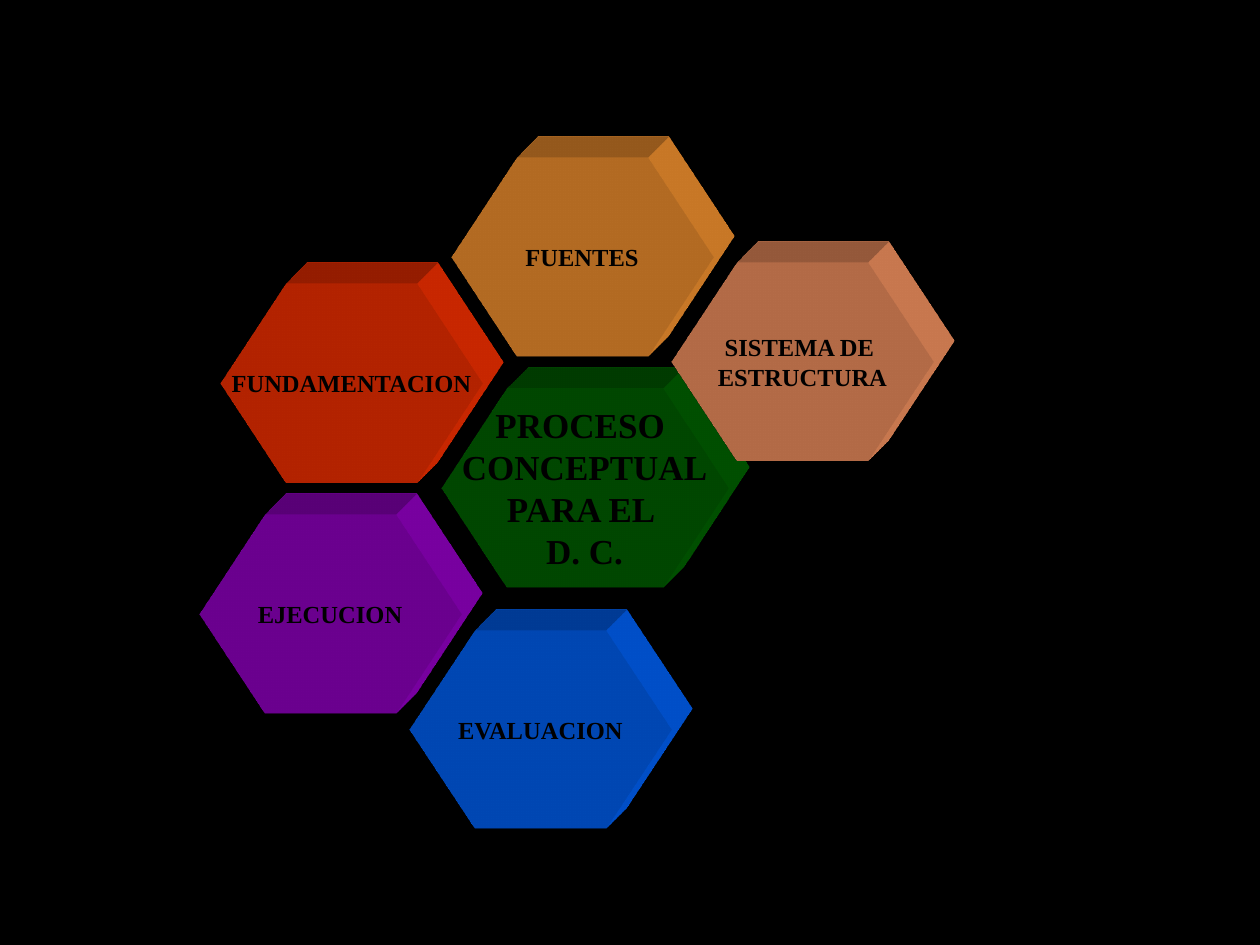
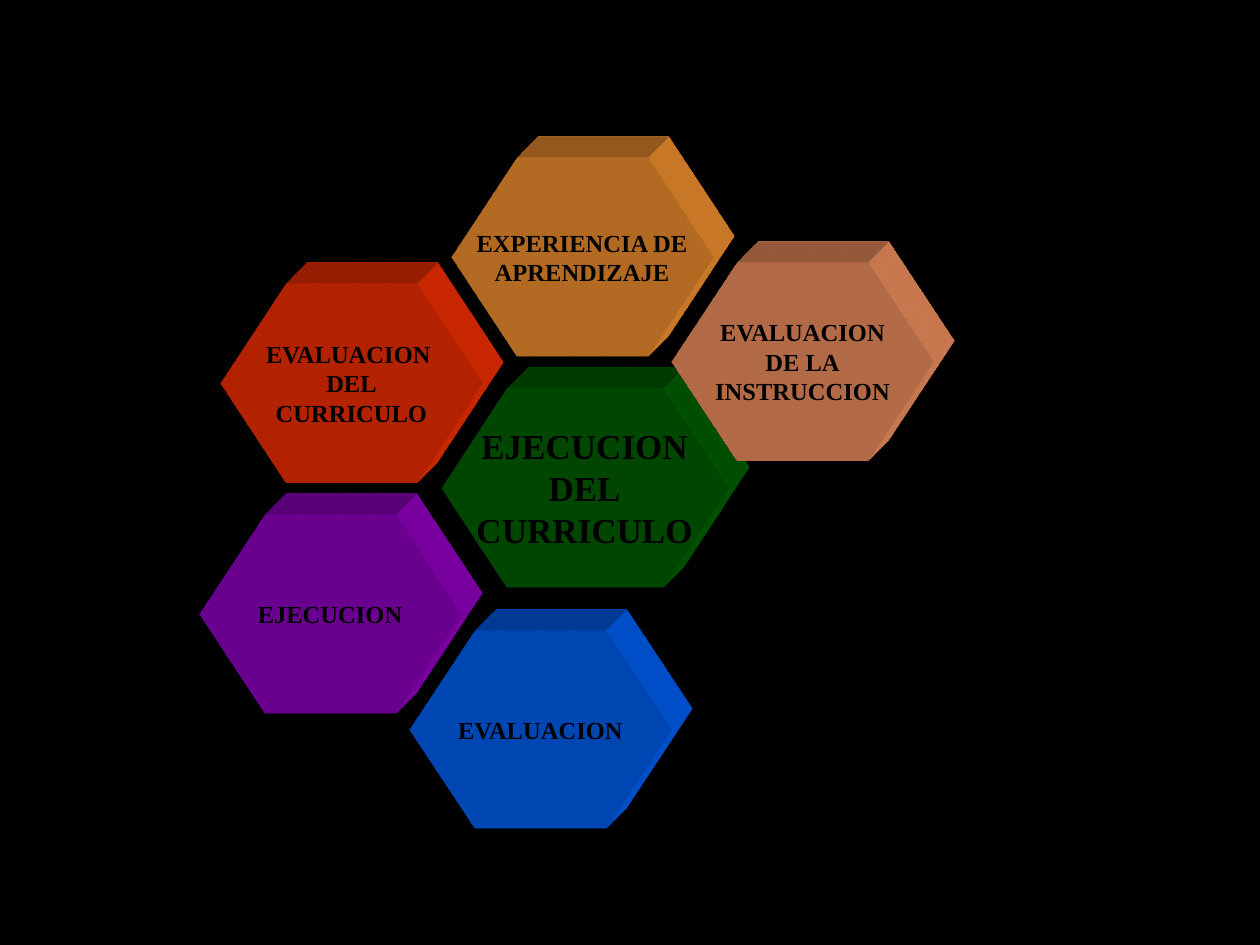
from lxml import etree
from pptx import Presentation
from pptx.dml.color import RGBColor
from pptx.enum.shapes import MSO_SHAPE
from pptx.enum.text import MSO_ANCHOR, PP_ALIGN
from pptx.oxml import parse_xml
from pptx.util import Inches, Pt

HEXAGON = MSO_SHAPE.HEXAGON
MIDDLE = MSO_ANCHOR.MIDDLE
CENTER = PP_ALIGN.CENTER

BLACK = RGBColor(0x00, 0x00, 0x00)
GREEN = RGBColor(0x00, 0x66, 0x00)
BLUE = RGBColor(0x00, 0x66, 0xFF)
PURPLE = RGBColor(0x99, 0x00, 0xCC)
RED = RGBColor(0xFF, 0x33, 0x00)
ORANGE = RGBColor(0xFF, 0x99, 0x33)
SALMON = RGBColor(0xFF, 0x99, 0x66)
FONT = "Times New Roman"

# Labels of each honeycomb, one list of lines per cell, in the order of CELLS
HONEYCOMBS = [
    [
        ["PROCESO ", "CONCEPTUAL", "PARA EL ", "D. C."],
        ["EVALUACION"],
        ["EJECUCION"],
        ["FUNDAMENTACION"],
        ["FUENTES"],
        ["SISTEMA DE ", "ESTRUCTURA"],
    ],
    [
        ["EJECUCION", "DEL", "CURRICULO"],
        ["EVALUACION"],
        ["EJECUCION"],
        ["EVALUACION ", "DEL", "CURRICULO"],
        ["EXPERIENCIA DE", "APRENDIZAJE"],
        ["EVALUACION", "DE LA", "INSTRUCCION"],
    ],
]

# Cells: left, top, width, text size, colour; the central topic comes first
CELL_HEIGHT = 1.58
CELLS = [
    (3.5, 3.08, 2.28, 20, GREEN),
    (3.25, 5, 2.08, 14, BLUE),
    (1.58, 4.08, 2.08, 14, PURPLE),
    (1.75, 2.25, 2.08, 14, RED),
    (3.58, 1.25, 2.08, 14, ORANGE),
    (5.33, 2.08, 2.08, 14, SALMON),
]

# Depth towards the top right, in the cell's own colour
A_NS = "http://schemas.openxmlformats.org/drawingml/2006/main"
SCENE = (f'<a:scene3d xmlns:a="{A_NS}"><a:camera prst="legacyObliqueTopRight"/>'
         '<a:lightRig rig="legacyFlat3" dir="b"/></a:scene3d>')
DEPTH = (f'<a:sp3d xmlns:a="{A_NS}" extrusionH="430200" prstMaterial="legacyMatte">'
         '<a:bevelT w="13500" h="13500" prst="angle"/>'
         '<a:bevelB w="13500" h="13500" prst="angle"/>'
         '<a:extrusionClr/></a:sp3d>')


def extrude(cell, colour):
    depth = parse_xml(DEPTH)
    side = depth.find(f"{{{A_NS}}}extrusionClr")
    etree.SubElement(side, f"{{{A_NS}}}srgbClr", val=str(colour))
    properties = cell._element.spPr
    properties.append(parse_xml(SCENE))
    properties.append(depth)


def add_cell(slide, lines, left, top, width, size, colour):
    cell = slide.shapes.add_shape(HEXAGON, Inches(left), Inches(top),
                                  Inches(width), Inches(CELL_HEIGHT))
    cell.adjustments[0] = 0.329
    cell.fill.solid()
    cell.fill.fore_color.rgb = colour
    cell.line.fill.background()
    cell.shadow.inherit = False
    extrude(cell, colour)

    frame = cell.text_frame
    frame.word_wrap = False
    frame.vertical_anchor = MIDDLE
    for number, line in enumerate(lines):
        paragraph = frame.add_paragraph() if number else frame.paragraphs[0]
        paragraph.alignment = CENTER
        run = paragraph.add_run()
        run.text = line
        run.font.name = FONT
        run.font.size = Pt(size)
        run.font.bold = True
        run.font.color.rgb = BLACK


def main():
    deck = Presentation()
    deck.slide_width, deck.slide_height = Inches(10), Inches(7.5)
    blank = deck.slide_layouts[6]

    # Black background for every slide
    background = deck.slide_master.background.fill
    background.solid()
    background.fore_color.rgb = BLACK

    for labels in HONEYCOMBS:
        slide = deck.slides.add_slide(blank)
        for lines, cell in zip(labels, CELLS):
            add_cell(slide, lines, *cell)
    deck.save("out.pptx")


if __name__ == "__main__":
    main()
